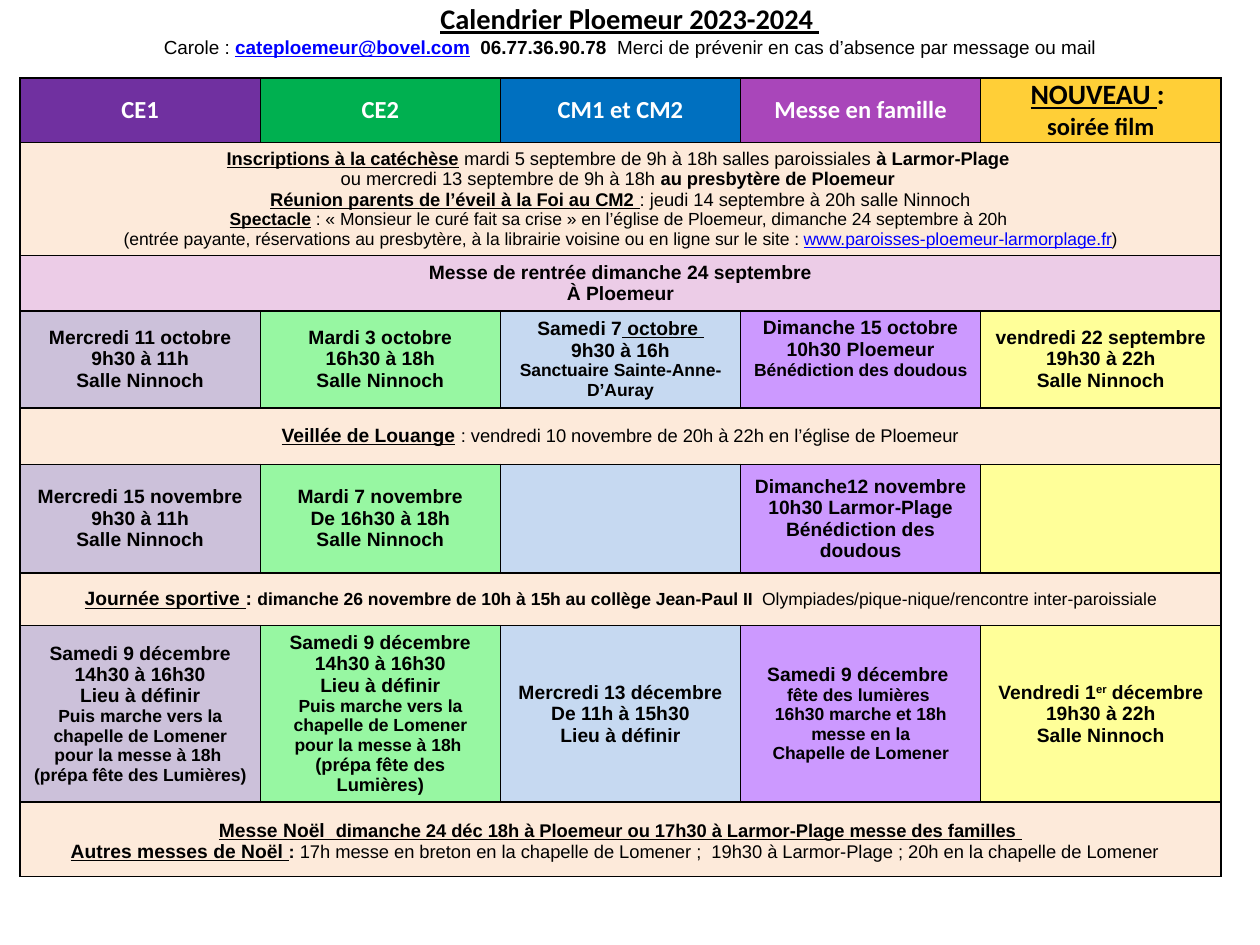
from lxml.etree import SubElement
from pptx import Presentation
from pptx.dml.color import RGBColor
from pptx.enum.text import MSO_ANCHOR, MSO_AUTO_SIZE, PP_ALIGN
from pptx.oxml.ns import qn
from pptx.util import Inches, Pt

HEX = {
    "black": "000000", "white": "FFFFFF", "link": "0000FF",
    "violet": "7030A0", "green": "00B050", "blue": "0070C0",
    "plum": "A946BA", "gold": "FFCF37",
    "peach": "FDEADA", "pink": "ECCCE7",
    "lilac": "CCC1DA", "mint": "97F7A2", "sky": "C6D9F1",
    "mauve": "CC99FF", "lemon": "FFFF99",
}
HEADS = ["violet", "green", "blue", "plum", "gold"]
TINTS = ["lilac", "mint", "sky", "mauve", "lemon"]

LINE = dict(under=True)
THIN = dict(bold=False)
TINY = dict(size=10)
NOTE = dict(size=10, bold=False)
MID = dict(size=10.5)
MID_LINE = dict(size=10.5, under=True)
MID_THIN = dict(size=10.5, bold=False)
HEAD = dict(size=14, font="Calibri", color="white")
NEW = dict(size=16, font="Calibri")


def put(para, text, size=11, bold=True, under=False, color="black",
        font="Arial", raised=False):
    run = para.add_run()
    run.text = text
    face = run.font
    face.name, face.size = font, Pt(size)
    face.bold, face.underline = bold, under
    face.color.rgb = RGBColor.from_string(HEX[color])
    if raised:
        run._r.get_or_add_rPr().set("baseline", "30000")


def fill_text(frame, lines):
    """Write centred lines; a line is a string or a list of (text, format) runs."""
    for i, line in enumerate(lines):
        para = frame.add_paragraph() if i else frame.paragraphs[0]
        para.alignment = PP_ALIGN.CENTER
        for text, style in [(line, {})] if isinstance(line, str) else line:
            put(para, text, **style)


# Each row: height, fill colours, cells. One cell means a full-width band.
march = [("Puis marche vers la chapelle de Lomener pour la messe à 18h ", TINY)]
december = ["Samedi 9 décembre", "14h30 à 16h30", "Lieu à définir", march]
rows = [
    (0.51, HEADS, [
        [[("CE1", HEAD)]], [[("CE2", HEAD)]], [[("CM1 et CM2", HEAD)]],
        [[("Messe en famille", HEAD)]],
        [[("NOUVEAU ", NEW | LINE), (": ", NEW)],
         [("soirée film", NEW | dict(size=14))]],
    ]),
    (0.89, ["peach"], [[
        [("Inscriptions à la catéchèse", MID_LINE),
         (" mardi 5 septembre de 9h à 18h salles paroissiales ", MID_THIN),
         ("à Larmor-Plage ", MID)],
        [("ou mercredi 13 septembre de 9h à 18h ", MID_THIN),
         ("au presbytère de Ploemeur ", MID)],
        [("Réunion parents de l’éveil à la Foi au CM2 ", MID_LINE),
         (": jeudi 14 septembre à 20h salle Ninnoch", MID_THIN)],
        [("Spectacle", TINY | LINE),
         (" : « Monsieur le curé fait sa crise » en l’église de Ploemeur, "
          "dimanche 24 septembre à 20h ", NOTE)],
        [("(entrée payante, réservations au presbytère, à la librairie voisine "
          "ou en ligne sur le site : ", NOTE),
         ("www.paroisses-ploemeur-larmorplage.fr",
          NOTE | LINE | dict(color="link")),
         (")", NOTE)],
    ]]),
    (0.44, ["pink"], [["Messe de rentrée dimanche 24 septembre", "À Ploemeur"]]),
    (0.77, TINTS, [
        ["Mercredi 11 octobre", "9h30 à 11h", "Salle Ninnoch"],
        ["Mardi 3 octobre", "16h30 à 18h", "Salle Ninnoch"],
        [[("Samedi 7", {}), (" octobre ", LINE)], "9h30 à 16h",
         [("Sanctuaire Sainte-Anne-D’Auray", TINY)]],
        ["Dimanche 15 octobre", "10h30 Ploemeur",
         [("Bénédiction des doudous", TINY)]],
        ["vendredi 22 septembre 19h30 à 22h", "Salle Ninnoch"],
    ]),
    (0.45, ["peach"], [[
        [("Veillée de Louange", LINE), (" ", {}),
         (": vendredi 10 novembre de 20h à 22h en l’église de Ploemeur",
          MID_THIN)],
    ]]),
    (0.86, TINTS, [
        ["Mercredi 15 novembre", "9h30 à 11h", "Salle Ninnoch"],
        ["Mardi 7 novembre", "De 16h30 à 18h", "Salle Ninnoch"],
        [],
        ["Dimanche12 novembre", "10h30 Larmor-Plage", "Bénédiction des doudous"],
        [],
    ]),
    (0.42, ["peach"], [[
        [("Journée sportive ", LINE), (": ", {}),
         ("dimanche 26 novembre de 10h à 15h au collège Jean-Paul II ", TINY),
         (" Olympiades/pique-nique/rencontre inter-paroissiale", NOTE)],
    ]]),
    (1.39, TINTS, [
        december + [[("(prépa fête des Lumières)", TINY)]],
        december + [[("(prépa fête des Lumières)", MID)]],
        ["Mercredi 13 décembre", "De 11h à 15h30", "Lieu à définir"],
        ["Samedi 9 décembre ", [("fête des lumières ", TINY)],
         [("16h30 marche et 18h messe en la", TINY)],
         [("Chapelle de Lomener", TINY)]],
        [[("Vendredi 1", {}), ("er", dict(raised=True)), (" décembre", {})],
         "19h30 à 22h", "Salle Ninnoch"],
    ]),
    (0.59, ["peach"], [[
        [("Messe Noël  ", LINE),
         ("dimanche 24 déc 18h à Ploemeur ou 17h30 à Larmor-Plage "
          "messe des familles ", MID_LINE)],
        [("Autres messes de Noël ", LINE), (": ", MID),
         ("17h messe en breton en la chapelle de Lomener ;  19h30 à "
          "Larmor-Plage ; 20h en la chapelle de Lomener  ", MID_THIN)],
    ]]),
]

deck = Presentation()
deck.slide_width, deck.slide_height = Inches(10), Inches(7.5)
slide = deck.slides.add_slide(deck.slide_layouts[5])

title = slide.shapes.title
title.left, title.top = Inches(0), Inches(0)
title.width, title.height = Inches(10), Inches(0.47)
frame = title.text_frame
frame.auto_size = MSO_AUTO_SIZE.NONE
frame.word_wrap = True
frame.vertical_anchor = MSO_ANCHOR.MIDDLE
frame.margin_top = frame.margin_bottom = 0
small = dict(size=10.8)
fill_text(frame, [
    [("Calendrier Ploemeur 2023-2024 ", dict(size=16.2, font="Calibri") | LINE)],
    [("Carole : ", small | THIN),
     ("cateploemeur@bovel.com", small | LINE | dict(color="link")),
     ("  06.77.36.90.78  ", small),
     ("Merci de prévenir en cas d’absence par message ou mail", small | THIN)],
])

COLS = 5
high = sum(row[0] for row in rows)
table = slide.shapes.add_table(len(rows), COLS, Inches(0.16), Inches(0.62),
                               Inches(9.53), Inches(high)).table
table.first_row = table.horz_banding = False
for col in table.columns:
    col.width = Inches(9.53 / COLS)

for r, (tall, tints, cells) in enumerate(rows):
    table.rows[r].height = Inches(tall)
    for c in range(COLS):
        cell = table.cell(r, c)
        props = cell._tc.get_or_add_tcPr()
        for side in ("lnL", "lnR", "lnT", "lnB"):
            edge = SubElement(props, qn(f"a:{side}"), w=str(Pt(1)))
            paint = SubElement(edge, qn("a:solidFill"))
            SubElement(paint, qn("a:srgbClr"), val=HEX["black"])
        cell.fill.solid()
        cell.fill.fore_color.rgb = RGBColor.from_string(HEX[tints[c % len(tints)]])
        cell.vertical_anchor = MSO_ANCHOR.MIDDLE
        if r == 0:
            cell.margin_left = cell.margin_right = 0
            cell.margin_top = cell.margin_bottom = 0
    if len(cells) == 1:
        table.cell(r, 0).merge(table.cell(r, COLS - 1))
    for c, lines in enumerate(cells):
        fill_text(table.cell(r, c).text_frame, lines)

# The October family mass sits a little high, the Christmas band a little low.
table.cell(3, 3).margin_bottom = Inches(0.22)
table.cell(8, 0).margin_top = Inches(0.08)

deck.save("out.pptx")
